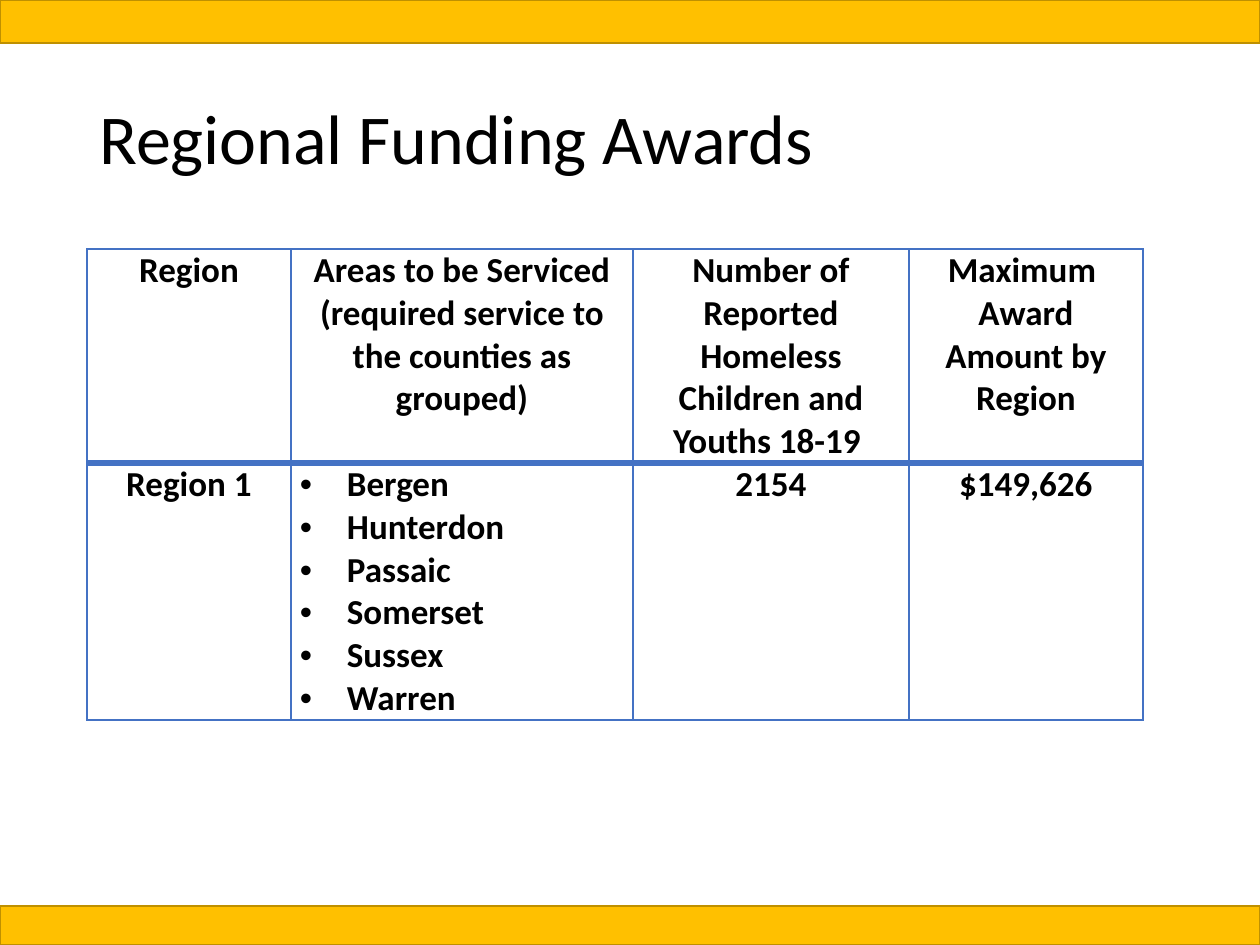
import lxml.etree
import pptx
import pptx.dml.color
import pptx.enum.shapes
import pptx.enum.text
import pptx.oxml.ns
import pptx.util

PX = 914400 // 126
ALIGN = pptx.enum.text.PP_ALIGN
GOLD, DARK_GOLD, BLUE, BLACK = "FFC000", "BF9000", "4472C4", "000000"


def px(n):
    return pptx.util.Emu(n * PX)


def rgb(value):
    return pptx.dml.color.RGBColor.from_string(value)


def add_xml(parent, tag, **attrs):
    return lxml.etree.SubElement(parent, pptx.oxml.ns.qn(tag), attrs)


class Deck:
    font = "Calibri"

    def __init__(self, width, height):
        self.prs = pptx.Presentation()
        self.prs.slide_width, self.prs.slide_height = px(width), px(height)
        self.s = self.prs.slides.add_slide(self.prs.slide_layouts[6])

    def style(self, p, size, bold=False):
        p.font.name, p.font.size, p.font.bold = self.font, pptx.util.Pt(size), bold
        p.font.color.rgb = rgb(BLACK)

    def bar(self, x, y, w, h):
        sp = self.s.shapes.add_shape(
            pptx.enum.shapes.MSO_SHAPE.RECTANGLE, px(x), px(y), px(w), px(h))
        sp.shadow.inherit = False
        sp.fill.solid()
        sp.fill.fore_color.rgb = rgb(GOLD)
        sp.line.color.rgb = rgb(DARK_GOLD)
        sp.line.width = pptx.util.Pt(1)

    def title(self, text, x, y, w, h):
        tf = self.s.shapes.add_textbox(px(x), px(y), px(w), px(h)).text_frame
        tf.word_wrap = True
        tf.vertical_anchor = pptx.enum.text.MSO_ANCHOR.MIDDLE
        p = tf.paragraphs[0]
        p.text = text
        p.line_spacing = 0.9
        self.style(p, 40)

    def bullet(self, p, indent):
        pPr = p._p.get_or_add_pPr()
        pPr.set("marL", str(px(indent)))
        pPr.set("indent", str(-px(indent)))
        add_xml(pPr, "a:buFont", typeface="Arial")
        add_xml(pPr, "a:buChar", char="•")

    def borders(self, cell, top, bottom):
        """Draw the four cell borders; top and bottom are widths in points."""
        tcPr = cell._tc.get_or_add_tcPr()
        for side, width in zip("LRTB", (1, 1, top, bottom)):
            ln = add_xml(tcPr, f"a:ln{side}", w=str(pptx.util.Pt(width)))
            add_xml(add_xml(ln, "a:solidFill"), "a:srgbClr", val=BLUE)

    def cell(self, cell, content, top, bottom):
        """Fill a cell with a string, or with a bulleted list of strings."""
        cell.margin_left = cell.margin_right = px(9)
        cell.margin_top = cell.margin_bottom = 0
        self.borders(cell, top, bottom)
        cell.fill.background()
        bulleted = isinstance(content, list)
        tf = cell.text_frame
        tf.text = "\n".join(content) if bulleted else content
        for p in tf.paragraphs:
            p.alignment = ALIGN.JUSTIFY if bulleted else ALIGN.CENTER
            if bulleted:
                self.bullet(p, 47)
            self.style(p, 20, bold=True)

    def table(self, rows, x, y, widths, heights):
        tbl = self.s.shapes.add_table(
            len(rows), len(widths), px(x), px(y), px(sum(widths)), px(sum(heights))).table
        tbl.first_row = tbl.horz_banding = False
        for col, width in zip(tbl.columns, widths):
            col.width = px(width)
        for i, (row, height) in enumerate(zip(rows, heights)):
            tbl.rows[i].height = px(height)
            top, bottom = (1, 4) if i == 0 else (4, 1)
            for j, content in enumerate(row):
                self.cell(tbl.cell(i, j), content, top, bottom)


def main():
    deck = Deck(1260, 945)
    deck.bar(0, 0, 1260, 43)
    deck.bar(0, 906, 1260, 39)
    deck.title("Regional Funding Awards", 87, 50, 1086, 183)
    counties = ["Bergen", "Hunterdon", "Passaic", "Somerset", "Sussex", "Warren"]
    rows = [
        ["Region",
         "Areas to be Serviced (required service to the counties as grouped)",
         "Number of Reported Homeless Children and Youths 18-19 ",
         "Maximum \nAward Amount by Region"],
        ["Region 1", counties, "2154", "$149,626"],
    ]
    deck.table(rows, 87, 249, widths=[204, 342, 276, 234], heights=[214, 257])
    deck.prs.save("out.pptx")


if __name__ == "__main__":
    main()
